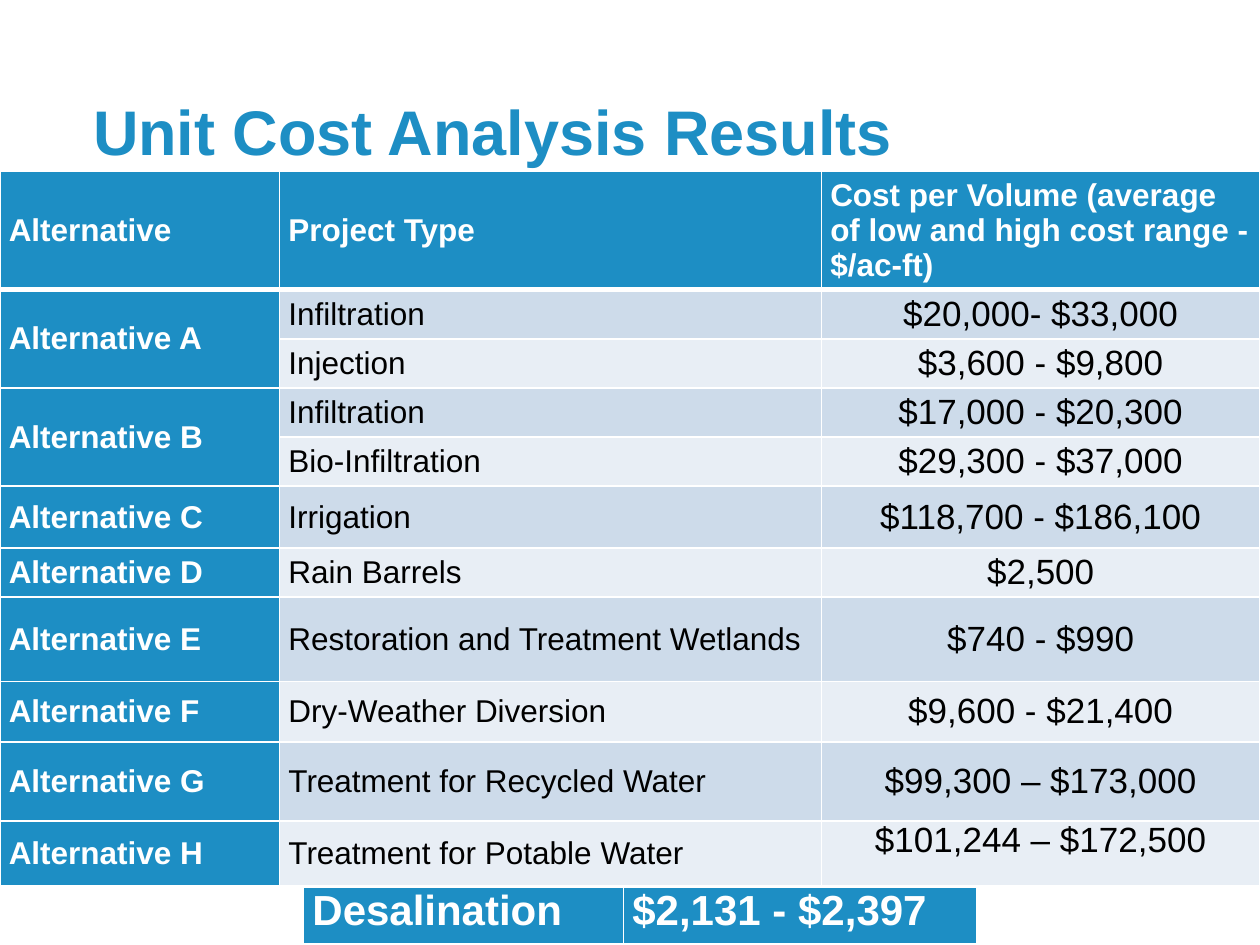
from lxml import etree
from pptx import Presentation
from pptx.dml.color import RGBColor
from pptx.enum import text
from pptx.oxml import ns
from pptx.util import Inches, Pt

BLUE, WHITE, BLACK = "1D8EC4", "FFFFFF", "000000"
BANDS = ["CDDBEA", "E8EEF5"]
HEADINGS = ["Alternative", "Project Type",
            "Cost per Volume (average of low and high cost range - $/ac-ft)"]
PROJECTS = [
    ("Alternative A", "Infiltration", "$20,000- $33,000", 0.39),
    ("", "Injection", "$3,600 - $9,800", 0.39),
    ("Alternative B", "Infiltration", "$17,000 - $20,300", 0.39),
    ("", "Bio-Infiltration", "$29,300 - $37,000", 0.39),
    ("Alternative C", "Irrigation", "$118,700 - $186,100", 0.49),
    ("Alternative D", "Rain Barrels", "$2,500", 0.39),
    ("Alternative E", "Restoration and Treatment Wetlands", "$740 - $990", 0.67),
    ("Alternative F", "Dry-Weather Diversion", "$9,600 - $21,400", 0.48),
    ("Alternative G", "Treatment for Recycled Water", "$99,300 – $173,000", 0.63),
    ("Alternative H", "Treatment for Potable Water", "$101,244 – $172,500", 0.51),
]


def rgb(color):
    return RGBColor.from_string(color)


def add_run(paragraph, wording, size, color, bold):
    run = paragraph.add_run()
    run.text = wording
    run.font.name = "Arial"
    run.font.size = Pt(size)
    run.font.bold = bold
    run.font.color.rgb = rgb(color)


def add_title(slide, wording):
    title = slide.shapes.add_textbox(Inches(0.64), Inches(0.73), Inches(8.62), Inches(0.68))
    frame = title.text_frame
    frame.word_wrap = True
    frame.vertical_anchor = text.MSO_ANCHOR.MIDDLE
    frame.paragraphs[0].line_spacing = 0.9
    add_run(frame.paragraphs[0], wording, 36, BLUE, True)


def set_borders(cell, bottom):
    properties = cell._tc.get_or_add_tcPr()
    for position, (side, width) in enumerate(
            [("lnL", 1), ("lnR", 1), ("lnT", 1), ("lnB", bottom)]):
        line = etree.Element(ns.qn(f"a:{side}"), w=str(Pt(width)))
        fill = etree.SubElement(line, ns.qn("a:solidFill"))
        etree.SubElement(fill, ns.qn("a:srgbClr"), val=WHITE)
        properties.insert(position, line)


def fill_cell(cell, wording, fill=BLUE, color=WHITE, size=18, bold=True,
              centered=False, anchor=text.MSO_ANCHOR.MIDDLE, bottom=1):
    cell.margin_left = cell.margin_right = Inches(0.07)
    cell.margin_top = cell.margin_bottom = 0
    cell.vertical_anchor = anchor
    cell.fill.solid()
    cell.fill.fore_color.rgb = rgb(fill)
    set_borders(cell, bottom)
    paragraph = cell.text_frame.paragraphs[0]
    if centered:
        paragraph.alignment = text.PP_ALIGN.CENTER
    if wording:
        add_run(paragraph, wording, size, color, bold)
    else:
        paragraph.font.size = Pt(size)


def add_grid(slide, left, top, widths, heights):
    grid = slide.shapes.add_table(
        len(heights), len(widths), Inches(left), Inches(top),
        Inches(sum(widths)), Inches(sum(heights))).table
    for column, width in zip(grid.columns, widths):
        column.width = Inches(width)
    for row, height in zip(grid.rows, heights):
        row.height = Inches(height)
    return grid


def add_cost_table(slide):
    heights = [0.94] + [height for *_, height in PROJECTS]
    costs = add_grid(slide, 0, 1.36, [2.22, 4.3, 3.48], heights)
    for column, heading in enumerate(HEADINGS):
        fill_cell(costs.cell(0, column), heading, bottom=3)
    for row, (alternative, project, cost, _) in enumerate(PROJECTS, 1):
        band = BANDS[(row - 1) % 2]
        last = row == len(PROJECTS)
        cost_anchor = text.MSO_ANCHOR.TOP if last else text.MSO_ANCHOR.MIDDLE
        fill_cell(costs.cell(row, 0), alternative)
        fill_cell(costs.cell(row, 1), project, band, BLACK, bold=False)
        fill_cell(costs.cell(row, 2), cost, band, BLACK, 20, False, True, cost_anchor)
        if not alternative:
            costs.cell(row - 1, 0).merge(costs.cell(row, 0))


def add_desalination_table(slide):
    desalination = add_grid(slide, 2.41, 7.04, [2.54, 2.8], [0.46])
    for column, wording in enumerate(["Desalination", "$2,131 - $2,397"]):
        fill_cell(desalination.cell(0, column), wording, size=24,
                  anchor=text.MSO_ANCHOR.TOP, bottom=3)


def main():
    deck = Presentation()
    deck.slide_width, deck.slide_height = Inches(10), Inches(7.5)
    slide = deck.slides.add_slide(deck.slide_layouts[6])
    add_title(slide, "Unit Cost Analysis Results")
    add_cost_table(slide)
    add_desalination_table(slide)
    deck.save("out.pptx")


if __name__ == "__main__":
    main()
